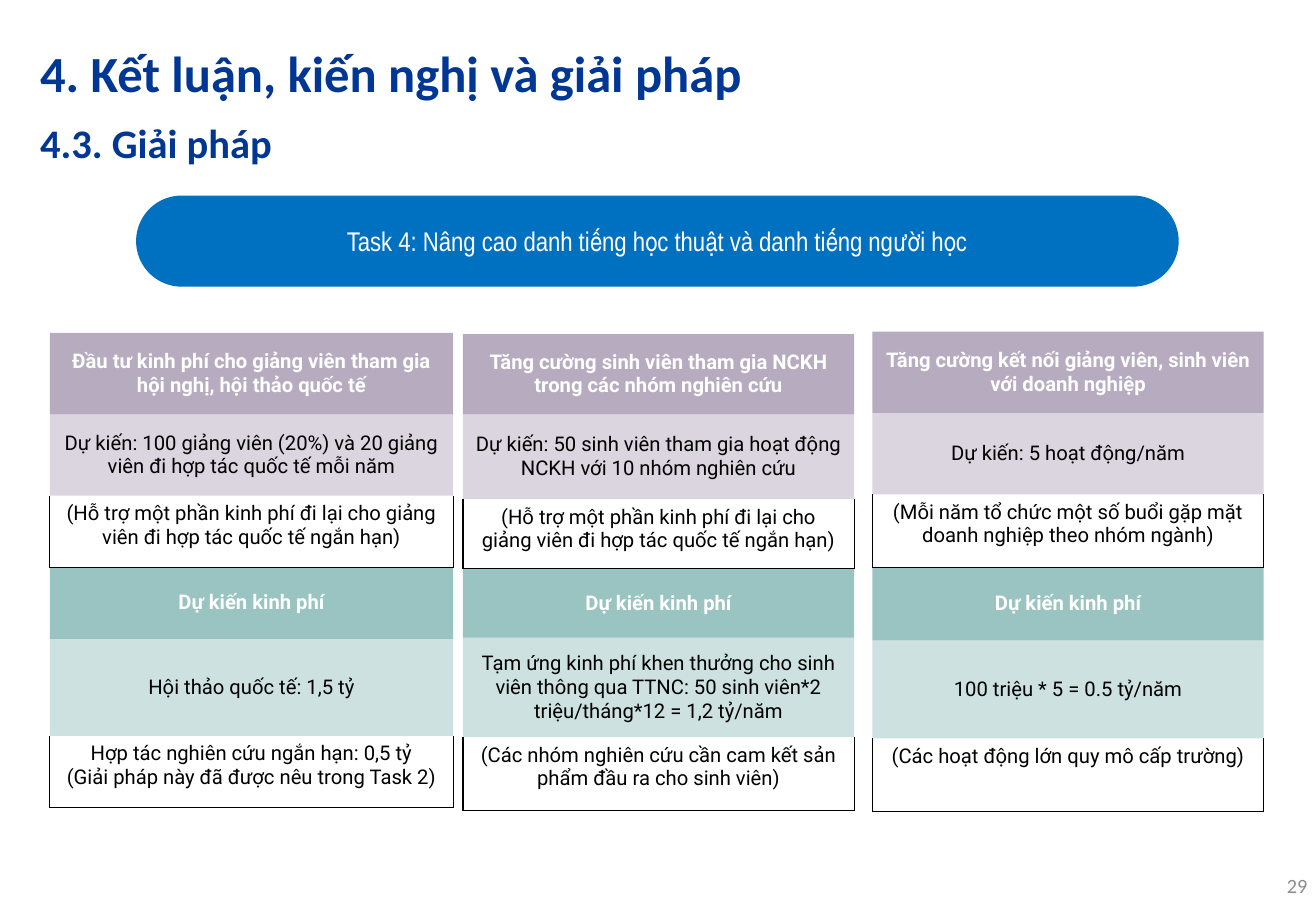
from dataclasses import dataclass
from typing import Any

from lxml.etree import SubElement
from pptx import Presentation
from pptx.dml.color import RGBColor
from pptx.enum.shapes import MSO_SHAPE
from pptx.enum.text import MSO_ANCHOR, MSO_AUTO_SIZE, PP_ALIGN
from pptx.oxml.ns import qn
from pptx.util import Emu, Pt

PX = 9144  # 100 px to the inch
NO_GRID_STYLE = "{2D5ABB26-0587-4C30-8999-92F81FD0307C}"


def px(length: int) -> Emu:
    return Emu(length * PX)


@dataclass(frozen=True)
class TextStyle:
    font: str
    size: int
    color: str
    bold: bool = False
    align: Any = PP_ALIGN.CENTER


@dataclass(frozen=True)
class Theme:
    title: TextStyle = TextStyle("Calibri", 30, "003794", True, PP_ALIGN.LEFT)
    subtitle: TextStyle = TextStyle("Calibri", 24, "003794", True, PP_ALIGN.LEFT)
    number: TextStyle = TextStyle("Calibri", 12, "8C8C8C", align=PP_ALIGN.RIGHT)
    task: TextStyle = TextStyle("Arial Narrow", 16, "FFFFFF")
    heading: TextStyle = TextStyle("Roboto", 12, "FFFFFF", True)
    detail: TextStyle = TextStyle("Roboto", 12, "000000")
    banner: str = "0070C0"
    plan: str = "6E5981"
    budget: str = "358A84"
    border: str = "000000"
    border_width: float = 0.75


THEME = Theme()


@dataclass(frozen=True)
class Box:
    left: int
    top: int
    width: int
    height: int


@dataclass(frozen=True)
class RowStyle:
    text: TextStyle
    fill: str = ""
    opacity: int = 0


@dataclass(frozen=True)
class SolutionTable:
    left: int
    top: int
    width: int
    heights: tuple[int, ...]
    texts: tuple[str, ...]


# Each table holds a plan block and a budget block of three rows
ROW_STYLES = [
    style
    for color in (THEME.plan, THEME.budget)
    for style in (
        RowStyle(THEME.heading, color, 50),
        RowStyle(THEME.detail, color, 25),
        RowStyle(THEME.detail),
    )
]

TABLES = [
    SolutionTable(41, 274, 332, (67, 67, 59, 59, 80, 59), (
        "Đầu tư kinh phí cho giảng viên tham gia hội nghị, hội thảo quốc tế",
        "Dự kiến: 100 giảng viên (20%) và 20 giảng viên đi hợp tác quốc tế mỗi năm",
        "(Hỗ trợ một phần kinh phí đi lại cho giảng viên đi hợp tác quốc tế ngắn hạn)",
        "Dự kiến kinh phí",
        "Hội thảo quốc tế: 1,5 tỷ",
        "Hợp tác nghiên cứu ngắn hạn: 0,5 tỷ\n(Giải pháp này đã được nêu trong Task 2)",
    )),
    SolutionTable(381, 275, 322, (66, 70, 57, 57, 82, 60), (
        "Tăng cường sinh viên tham gia NCKH trong các nhóm nghiên cứu",
        "Dự kiến: 50 sinh viên tham gia hoạt động NCKH với 10 nhóm nghiên cứu",
        "(Hỗ trợ một phần kinh phí đi lại cho giảng viên đi hợp tác quốc tế ngắn hạn)",
        "Dự kiến kinh phí",
        "Tạm ứng kinh phí khen thưởng cho sinh viên thông qua TTNC: "
        "50 sinh viên*2 triệu/tháng*12 = 1,2 tỷ/năm",
        "(Các nhóm nghiên cứu cần cam kết sản phẩm đầu ra cho sinh viên)",
    )),
    SolutionTable(718, 273, 322, (67, 67, 60, 60, 81, 60), (
        "Tăng cường kết nối giảng viên, sinh viên với doanh nghiệp",
        "Dự kiến: 5 hoạt động/năm",
        "(Mỗi năm tổ chức một số buổi gặp mặt doanh nghiệp theo nhóm ngành)",
        "Dự kiến kinh phí",
        "100 triệu * 5 = 0.5 tỷ/năm",
        "(Các hoạt động lớn quy mô cấp trường)",
    )),
]


def set_values(target: Any, values: dict[str, Any]) -> None:
    for name, value in values.items():
        setattr(target, name, value)


def write_text(frame: Any, text: str, style: TextStyle) -> None:
    frame.text = text
    for paragraph in frame.paragraphs:
        set_values(paragraph, {"alignment": style.align, "space_before": Pt(0)})
        set_values(paragraph.font, {
            "name": style.font, "size": Pt(style.size), "bold": style.bold,
        })
        paragraph.font.color.rgb = RGBColor.from_string(style.color)


def write_box(shape: Any, box: Box, text: str, style: TextStyle, inset: int = 0) -> None:
    set_values(shape, {
        "left": px(box.left), "top": px(box.top),
        "width": px(box.width), "height": px(box.height),
    })
    margins = {f"margin_{side}": px(inset) for side in ("left", "top", "right", "bottom")}
    set_values(shape.text_frame, {
        "word_wrap": True, "auto_size": MSO_AUTO_SIZE.NONE,
        "vertical_anchor": MSO_ANCHOR.MIDDLE, **margins,
    })
    write_text(shape.text_frame, text, style)


def remove_bullet(paragraph: Any) -> None:
    properties = paragraph._p.get_or_add_pPr()
    properties.set("marL", "0")
    properties.set("indent", "0")
    SubElement(properties, qn("a:buNone"))


def fill_cell(cell: Any, style: RowStyle) -> None:
    if style.fill:
        cell.fill.solid()
        cell.fill.fore_color.rgb = RGBColor.from_string(style.fill)
        color = cell._tc.tcPr.find(".//" + qn("a:srgbClr"))
        SubElement(color, qn("a:alpha"), val=str(style.opacity * 1000))
        return
    # Unfilled cells are outlined on three sides
    properties = cell._tc.get_or_add_tcPr()
    for side in ("lnL", "lnR", "lnB"):
        line = SubElement(properties, qn(f"a:{side}"), w=str(Pt(THEME.border_width)))
        solid = SubElement(line, qn("a:solidFill"))
        SubElement(solid, qn("a:srgbClr"), val=THEME.border)
    cell.fill.background()


def draw_table(slide: Any, data: SolutionTable) -> None:
    frame = slide.shapes.add_table(
        len(data.heights), 1, px(data.left), px(data.top),
        px(data.width), px(sum(data.heights)))
    table = frame.table
    set_values(table, {"first_row": False, "horz_banding": False})
    table._tbl.tblPr.find(qn("a:tableStyleId")).text = NO_GRID_STYLE
    for row, height, text, style in zip(table.rows, data.heights, data.texts, ROW_STYLES):
        row.height = px(height)
        cell = row.cells[0]
        inset = px(10 if style.fill else 5)
        set_values(cell, {
            "margin_left": px(10), "margin_right": px(10),
            "margin_top": inset, "margin_bottom": inset,
            "vertical_anchor": MSO_ANCHOR.MIDDLE if style.fill else MSO_ANCHOR.TOP,
        })
        write_text(cell.text_frame, text, style.text)
        fill_cell(cell, style)


def main() -> None:
    presentation = Presentation()
    set_values(presentation, {"slide_width": px(1083), "slide_height": px(750)})
    slide = presentation.slides.add_slide(presentation.slide_layouts[1])

    # Title, subtitle and page number
    write_box(slide.shapes.title, Box(33, 26, 1026, 67),
              "4. Kết luận, kiến nghị và giải pháp", THEME.title)
    subtitle = slide.placeholders[1]
    write_box(subtitle, Box(33, 84, 1026, 67), "4.3. Giải pháp", THEME.subtitle)
    remove_bullet(subtitle.text_frame.paragraphs[0])
    number = slide.shapes.add_textbox(0, 0, 0, 0)
    write_box(number, Box(886, 709, 190, 39), "29", THEME.number)

    # Task banner
    banner = slide.shapes.add_shape(MSO_SHAPE.ROUNDED_RECTANGLE, 0, 0, 0, 0)
    write_box(banner, Box(112, 161, 858, 75),
              "Task 4: Nâng cao danh tiếng học thuật và danh tiếng người học",
              THEME.task, inset=10)
    banner.adjustments[0] = 0.5
    banner.shadow.inherit = False
    banner.fill.solid()
    banner.fill.fore_color.rgb = RGBColor.from_string(THEME.banner)
    banner.line.fill.background()

    # Solution tables
    for data in TABLES:
        draw_table(slide, data)

    presentation.save("out.pptx")


if __name__ == "__main__":
    main()
